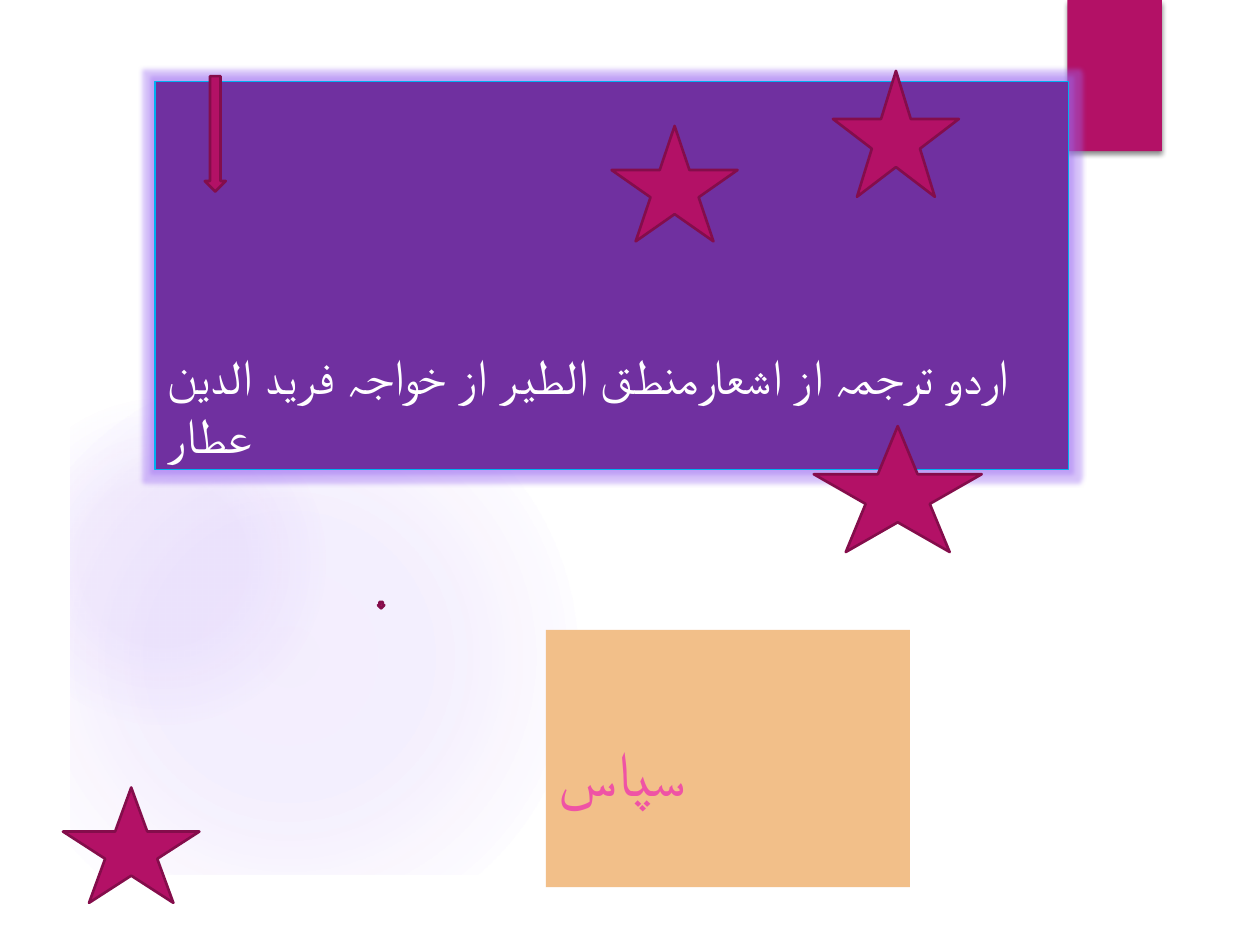
from pptx import Presentation
from pptx.dml.color import RGBColor
from pptx.enum.shapes import MSO_SHAPE
from pptx.enum.text import MSO_ANCHOR, PP_ALIGN
from pptx.oxml import parse_xml
from pptx.oxml.ns import nsdecls, qn
from pptx.util import Pt


def color(value):
    return RGBColor.from_string(value)


class SlideBuilder:
    """Holds the style and the current slide, and adds each kind of element."""

    font = "Quicksand"
    accent, outline, violet = "B31166", "840D4B", "9B6BF2"

    def __init__(self, slide):
        self.slide = slide

    def shape(self, kind, box, fill, line=None, line_width=1.5):
        shape = self.slide.shapes.add_shape(kind, *(Pt(length) for length in box))
        shape.shadow.inherit = False
        shape.fill.solid()
        shape.fill.fore_color.rgb = color(fill)
        if line:
            shape.line.color.rgb = color(line)
            shape.line.width = Pt(line_width)
        else:
            shape.line.fill.background()
        return shape

    def accent_shape(self, kind, box):
        return self.shape(kind, box, self.accent, self.outline)

    def haze(self, box, stops):
        haze = self.shape(MSO_SHAPE.OVAL, box, self.violet)
        stop_xml = "".join(
            f'<a:gs pos="{position * 1000}"><a:srgbClr val="{self.violet}">'
            f'<a:alpha val="{alpha * 1000}"/></a:srgbClr></a:gs>'
            for position, alpha in stops)
        gradient = parse_xml(
            f'<a:gradFill {nsdecls("a")} rotWithShape="1"><a:gsLst>{stop_xml}</a:gsLst>'
            '<a:path path="circle"><a:fillToRect l="50000" t="50000" r="50000" b="50000"/>'
            '</a:path></a:gradFill>')
        properties = haze._element.spPr
        properties.replace(properties.find(qn("a:solidFill")), gradient)

    def effect(self, shape, tag, attributes, hex_color, alpha):
        effects = shape._element.spPr.find(qn("a:effectLst"))
        effects.append(parse_xml(
            f'<a:{tag} {nsdecls("a")} {attributes}><a:srgbClr val="{hex_color}">'
            f'<a:alpha val="{alpha * 1000}"/></a:srgbClr></a:{tag}>'))

    def text(self, shape, words, size, hex_color, anchor, top=3.6):
        frame = shape.text_frame
        frame.word_wrap = True
        frame.vertical_anchor = anchor
        frame.margin_top = Pt(top)
        paragraph = frame.paragraphs[0]
        paragraph.text = words
        paragraph.alignment = PP_ALIGN.LEFT
        paragraph.font.name = self.font
        paragraph.font.size = Pt(size)
        paragraph.font.color.rgb = color(hex_color)


def main():
    deck = Presentation()
    deck.slide_width, deck.slide_height = Pt(720), Pt(540)
    builder = SlideBuilder(deck.slides.add_slide(deck.slide_layouts[6]))

    builder.haze((0, 228, 186, 186), [(0, 8), (36, 8), (72, 0)])
    builder.haze((0, 210, 330, 330), [(0, 11), (36, 10), (75, 0)])
    border = builder.shape(MSO_SHAPE.FRAME, (0, 0, 720, 540), "FFFFFF")
    border.adjustments[0] = 40 / 540

    ribbon = builder.shape(MSO_SHAPE.RECTANGLE, (610, 0, 54, 86.4), builder.accent)
    builder.effect(ribbon, "outerShdw", 'blurRad="38100" dist="25400" dir="5400000"',
                   "000000", 45)

    title = builder.shape(MSO_SHAPE.RECTANGLE, (88.5, 46.5, 522, 221.8), "7030A0", "00B0F0", 0.75)
    builder.effect(title, "glow", 'rad="63500"', builder.violet, 40)
    builder.text(title, "اردو ترجمہ از اشعارمنطق الطیر از خواجہ فرید الدین عطار",
                 28, "FFFFFF", MSO_ANCHOR.BOTTOM)

    thanks = builder.shape(MSO_SHAPE.RECTANGLE, (312, 360, 208, 147), "F2BF89")
    builder.text(thanks, "سپاس", 36, "EF53A5", MSO_ANCHOR.TOP, top=59)

    builder.accent_shape(MSO_SHAPE.DOWN_ARROW, (117, 43.5, 12, 66))
    for star in ((349.5, 72, 72, 66), (476, 40.5, 72, 72),
                 (36, 450, 78, 66), (465, 243.5, 96, 72)):
        builder.accent_shape(MSO_SHAPE.STAR_5_POINT, star)
    builder.accent_shape(MSO_SHAPE.DOWN_ARROW, (216, 344, 3.6, 3.6))

    deck.save("out.pptx")


if __name__ == "__main__":
    main()
